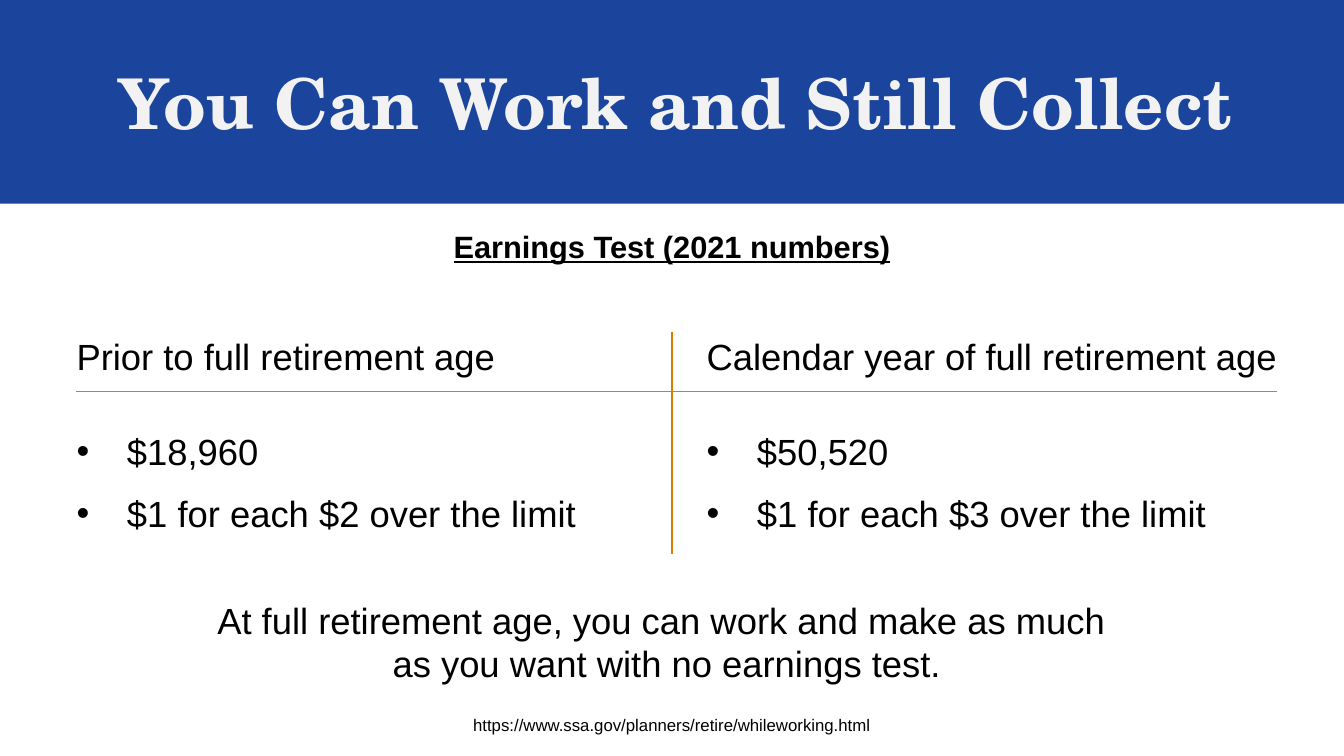
from lxml import etree
from pptx import Presentation
from pptx.dml.color import RGBColor
from pptx.enum.shapes import MSO_CONNECTOR, MSO_SHAPE
from pptx.enum.text import MSO_ANCHOR, MSO_AUTO_SIZE, PP_ALIGN
from pptx.oxml.ns import qn
from pptx.util import Pt

RECT = MSO_SHAPE.RECTANGLE
LINE = MSO_CONNECTOR.STRAIGHT
TOP = MSO_ANCHOR.TOP
FIXED = MSO_AUTO_SIZE.NONE
LEFT, MID = PP_ALIGN.LEFT, PP_ALIGN.CENTER
WIDE, HIGH = 960, 540
SIDES = [
    (54, 415.5, "Prior to full retirement age",
     ["$18,960", "$1 for each $2 over the limit"]),
    (504, 456, "Calendar year of full retirement age",
     ["$50,520", "$1 for each $3 over the limit"]),
]


def tint(code):
    return RGBColor.from_string(code)


def place(shape, left, top, width, height):
    shape.left, shape.top = Pt(left), Pt(top)
    shape.width, shape.height = Pt(width), Pt(height)


def style(par, size, face="Arial", color="000000", bold=False, line=False):
    font = par.font
    font.size, font.name = Pt(size), face
    font.bold, font.underline = bold, line
    font.color.rgb = tint(color)


def inset(frame, left, top, right, bottom):
    frame.margin_left, frame.margin_top = Pt(left), Pt(top)
    frame.margin_right, frame.margin_bottom = Pt(right), Pt(bottom)


def bullet(par):
    props = par._p.get_or_add_pPr()
    props.set("marL", str(Pt(36.7)))
    props.set("indent", str(-Pt(36)))
    font = etree.SubElement(props, qn("a:buFont"))
    font.set("typeface", "Arial")
    mark = etree.SubElement(props, qn("a:buChar"))
    mark.set("char", "•")


def add_band(slide):
    band = slide.shapes.add_shape(RECT, 0, 0, Pt(WIDE), Pt(145.5))
    band.shadow.inherit = False
    band.fill.solid()
    band.fill.fore_color.rgb = tint("1B449C")
    band.line.fill.background()
    slide.shapes._spTree.insert(2, band._element)


def add_title(slide, text):
    title = slide.shapes.title
    place(title, 0, 39, 966, 67.5)
    frame = title.text_frame
    frame.text = text
    frame.word_wrap = True
    frame.auto_size = FIXED
    frame.vertical_anchor = TOP
    par = frame.paragraphs[0]
    par.alignment = MID
    style(par, 50, "TeX Gyre Schola", "F2F2F2", True)


def add_text(slide, spot, lines, size, align=MID, pad=None, space=None,
             dots=False, strong=False):
    box = slide.shapes.add_textbox(0, 0, 0, 0)
    place(box, *spot)
    frame = box.text_frame
    frame.word_wrap = True
    frame.vertical_anchor = TOP
    if pad:
        inset(frame, *pad)
    frame.text = "\n".join(lines)
    for par in frame.paragraphs:
        par.alignment = align
        if space:
            par.line_spacing = space
        if dots:
            bullet(par)
        style(par, size, bold=strong, line=strong)


def add_side(slide, left, width, head, items):
    pad = (0, 1, 0, 0)
    add_text(slide, (left, 224, width, 42.5), [head], 26, LEFT,
             (0.7, 1, 0, 0), 1.44)
    add_text(slide, (left, 291.5, width, 88), items, 26, LEFT, pad, 1.44,
             dots=True)


def add_rule(slide, *ends):
    rule = slide.shapes.add_connector(LINE, *[Pt(end) for end in ends])
    rule.line.color.rgb = tint("DE7C00")
    rule.line.width = Pt(1)
    etree.SubElement(rule._element.spPr, qn("a:effectLst"))


def main():
    deck = Presentation()
    deck.slide_width, deck.slide_height = Pt(WIDE), Pt(HIGH)
    slide = deck.slides.add_slide(deck.slide_layouts[5])
    add_band(slide)
    add_title(slide, "You Can Work and Still Collect")
    add_text(slide, (0, 507, WIDE, 21.5),
             ["https://www.ssa.gov/planners/retire/whileworking.html"], 12)
    add_text(slide, (0, 159, WIDE, 34), ["Earnings Test (2021 numbers)"], 22,
             strong=True)
    for side in SIDES:
        add_side(slide, *side)
    add_text(slide, (0, 426, WIDE, 64),
             ["At full retirement age, you can work and make as much \v"
              "as you want with no earnings test."], 26, pad=(0, 1, 7, 0))
    add_rule(slide, 480, 237.5, 480, 396)
    add_rule(slide, 54, 279.5, 912, 279.5)
    deck.save("out.pptx")


if __name__ == "__main__":
    main()
